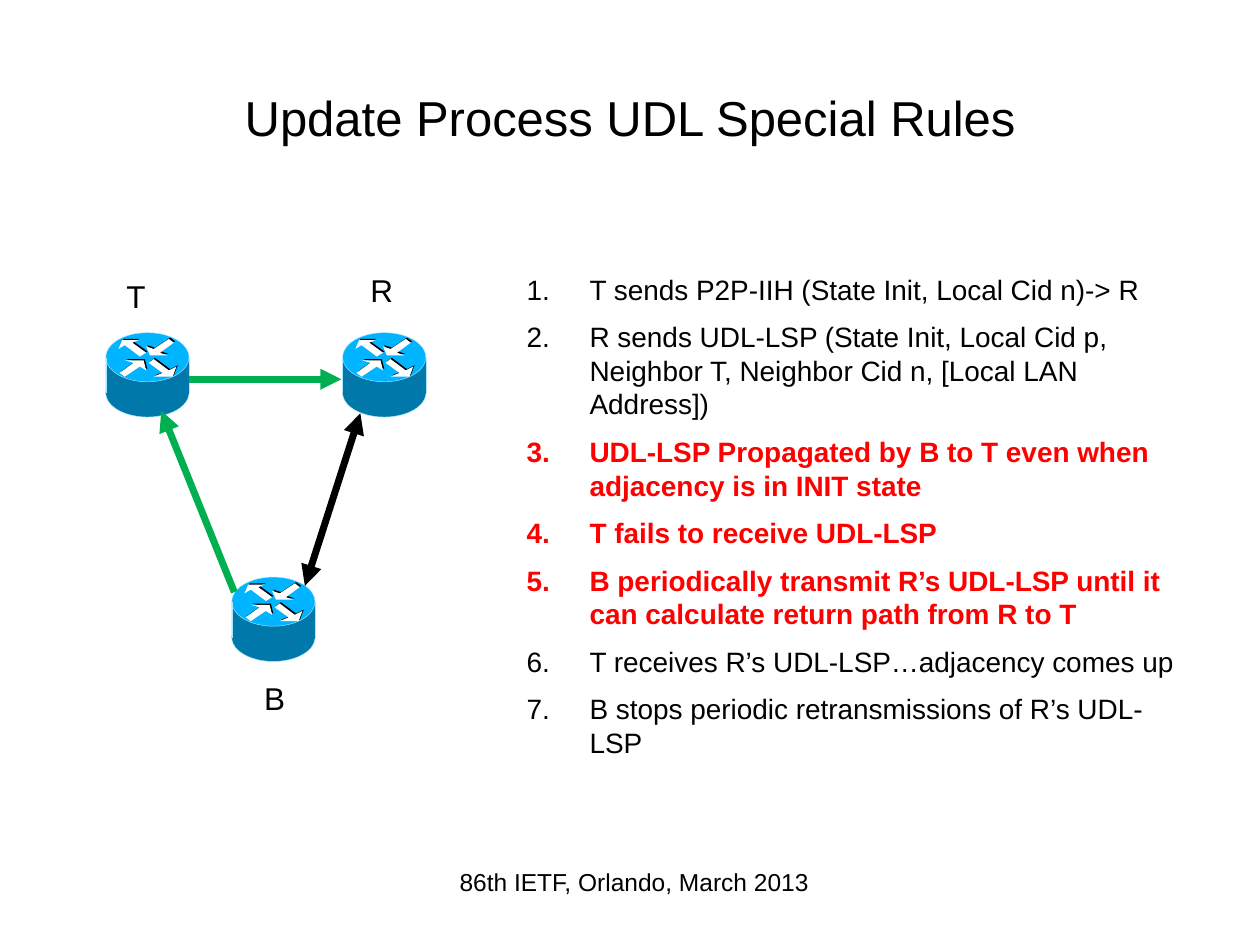
from lxml import etree
from pptx import Presentation
from pptx import util as u
from pptx.dml.color import RGBColor
from pptx.enum import shapes, text
from pptx.oxml.ns import qn

PX = 9144  # 100 px to the inch
BLACK, WHITE = RGBColor(0, 0, 0), RGBColor(255, 255, 255)
RED, GREEN = RGBColor(255, 0, 0), RGBColor(0, 0xB0, 0x50)
SIDE, TOP, RIM = RGBColor(0, 0x78, 0xAA), RGBColor(0, 0xB4, 0xFF), RGBColor(0xAA, 0xE6, 0xFF)

TITLE = "Update Process UDL Special Rules"
FOOTER = "86th IETF, Orlando, March 2013"
STEPS = [  # text, highlighted
    ("T sends P2P-IIH (State Init, Local Cid n)-> R", False),
    ("R sends UDL-LSP (State Init, Local Cid p, Neighbor T, Neighbor Cid n, [Local LAN Address])", False),
    ("UDL-LSP Propagated by B to T even when adjacency is in INIT state", True),
    ("T fails to receive UDL-LSP", True),
    ("B periodically transmit R’s UDL-LSP until it can calculate return path from R to T", True),
    ("T receives R’s UDL-LSP…adjacency comes up", False),
    ("B stops periodic retransmissions of R’s UDL-LSP", False),
]
ROUTERS = [  # name, router corner, label box
    ("R", (272, 264), (278, 211, 50, 68)),
    ("T", (84, 264), (69, 216, 78, 68)),
    ("B", (184, 458), (179, 535, 78, 68)),
]
LINKS = [  # from, to, colour, both ways
    ((242, 465), (286, 328), BLACK, True),
    ((186, 470), (128, 326), GREEN, False),
    ((150, 301), (271, 301), GREEN, False),
]
ROUTER_ARROWS = [
    [(32, 16), (27, 19), (15, 10), (10, 13), (13, 6), (26, 6), (21, 8)],
    [(34, 24), (38, 21), (50, 30), (56, 27), (53, 35), (38, 35), (45, 32)],
    [(54, 8), (50, 5), (38, 13), (32, 11), (35, 18), (49, 18), (43, 16)],
    [(11, 32), (15, 35), (27, 27), (32, 30), (30, 22), (15, 22), (22, 24)],
]


def px(*values):
    return [v * PX for v in values]


def paint(sp, fill, line=None):
    sp.shadow.inherit = False
    sp.fill.solid()
    sp.fill.fore_color.rgb = fill
    if line is None:
        sp.line.fill.background()
    else:
        sp.line.color.rgb = line
        sp.line.width = u.Pt(0.25)


def add_line(parent, start, end, color, width, heads=()):
    sp = parent.add_connector(shapes.MSO_CONNECTOR.STRAIGHT, *px(*start, *end))
    sp.line.color.rgb = color
    sp.line.width = u.Pt(width)
    ln = sp.line._get_or_add_ln()
    for tag in heads:
        etree.SubElement(ln, qn(tag), type="triangle")
    etree.SubElement(sp._element.spPr, qn("a:effectLst"))


def add_text(parent, box, items, size, align=text.PP_ALIGN.CENTER, anchor=text.MSO_ANCHOR.TOP,
             inset=(8, 4), first=0, gap=0, numbered=False):
    """Write (text, highlighted) items as paragraphs; first and gap are points before them."""
    tf = parent.add_textbox(*px(*box)).text_frame
    tf.word_wrap = True
    tf.vertical_anchor = anchor
    tf.margin_left = tf.margin_right = inset[0] * PX
    tf.margin_top = tf.margin_bottom = inset[1] * PX
    for i, (words, highlighted) in enumerate(items):
        p = tf.add_paragraph() if i else tf.paragraphs[0]
        p.alignment = align
        p.space_before = u.Pt(gap if i else first)
        if numbered:
            pPr = p._p.get_or_add_pPr()
            pPr.set("marL", str(50 * PX))
            pPr.set("indent", str(-50 * PX))
            etree.SubElement(pPr, qn("a:buFont"), typeface="+mj-lt")
            etree.SubElement(pPr, qn("a:buAutoNum"), type="arabicPeriod")
        r = p.add_run()
        r.text = words
        r.font.name = "Arial"
        r.font.size = u.Pt(size)
        r.font.bold = highlighted
        r.font.color.rgb = RED if highlighted else BLACK


def add_router(parent, x, y):
    group = parent.add_group_shape().shapes
    oval, rect = shapes.MSO_SHAPE.OVAL, shapes.MSO_SHAPE.RECTANGLE
    for kind, top, height, fill, line in [(oval, 29, 38, SIDE, RIM), (rect, 20, 29, SIDE, None),
                                          (oval, 0, 39, TOP, RIM)]:
        paint(group.add_shape(kind, *px(x, y + top, 66, height)), fill, line)
    for dx, dy, color in [(1, -1, BLACK), (0, 0, WHITE)]:
        for arrow in ROUTER_ARROWS:
            start, *rest = [(x + dx + ax, y + dy + ay) for ax, ay in arrow]
            fb = group.build_freeform(*start, scale=PX)
            fb.add_line_segments(rest, close=True)
            paint(fb.convert_to_shape(), color)
    for edge in (x + 66, x):
        add_line(group, (edge, y + 20), (edge, y + 48), RIM, 0.25)


def main():
    prs = Presentation()
    prs.slide_width, prs.slide_height = px(1000, 750)
    s = prs.slides.add_slide(prs.slide_layouts[6]).shapes
    add_text(s, (50, 30, 900, 125), [(TITLE, False)], 28, anchor=text.MSO_ANCHOR.MIDDLE, inset=(10, 5))
    add_text(s, (410, 212, 544, 493), STEPS, 16, align=text.PP_ALIGN.LEFT, first=2, gap=8, numbered=True)
    for name, corner, label in ROUTERS:
        add_router(s, *corner)
        add_text(s, label, [(name, False)], 18, first=2)
    for start, end, color, both in LINKS:
        add_line(s, start, end, color, 4, ("a:headEnd", "a:tailEnd") if both else ("a:tailEnd",))
    add_text(s, (287, 683, 433, 52), [(FOOTER, False)], 14, inset=(10, 5))
    prs.save("out.pptx")


if __name__ == "__main__":
    main()
